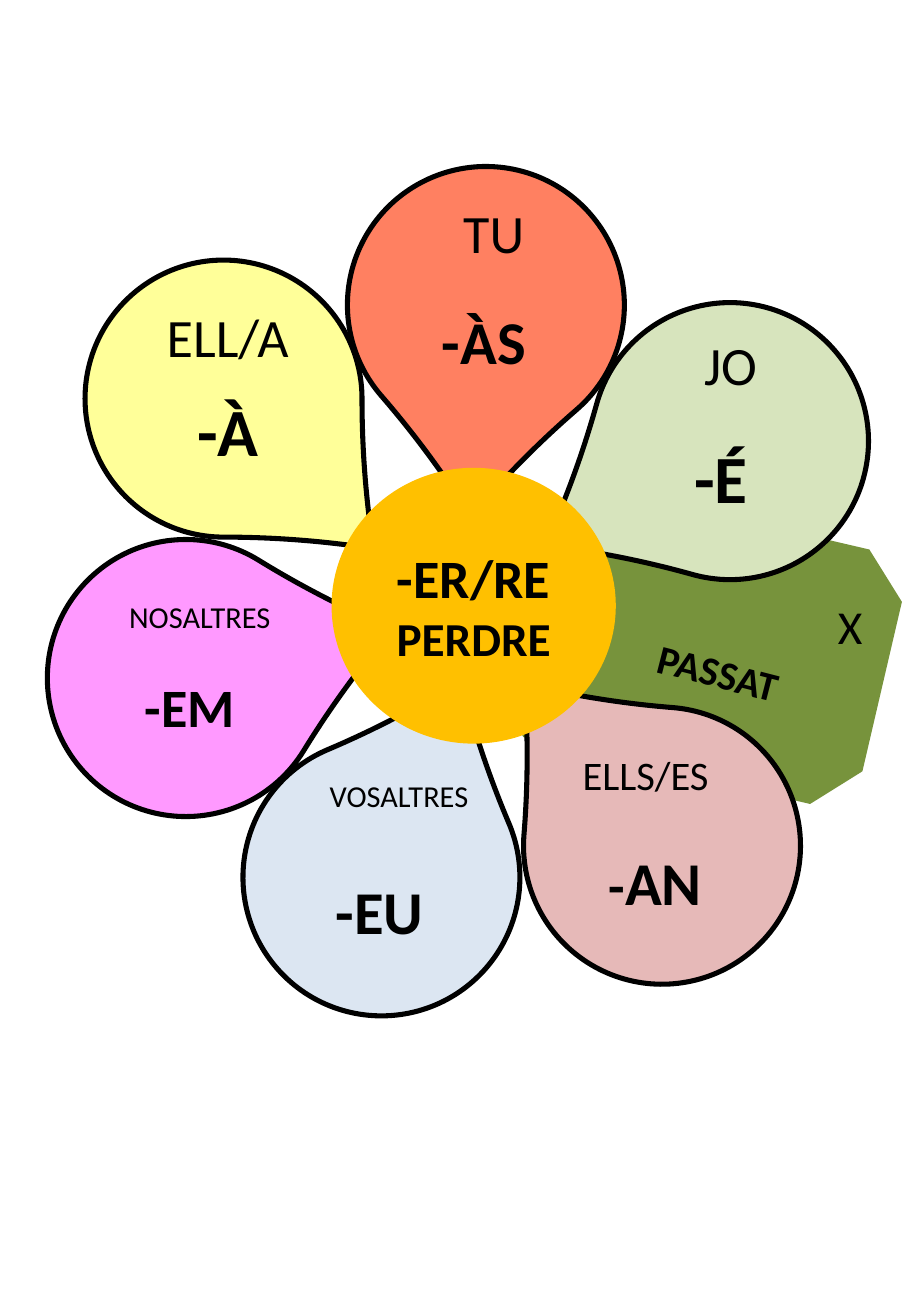
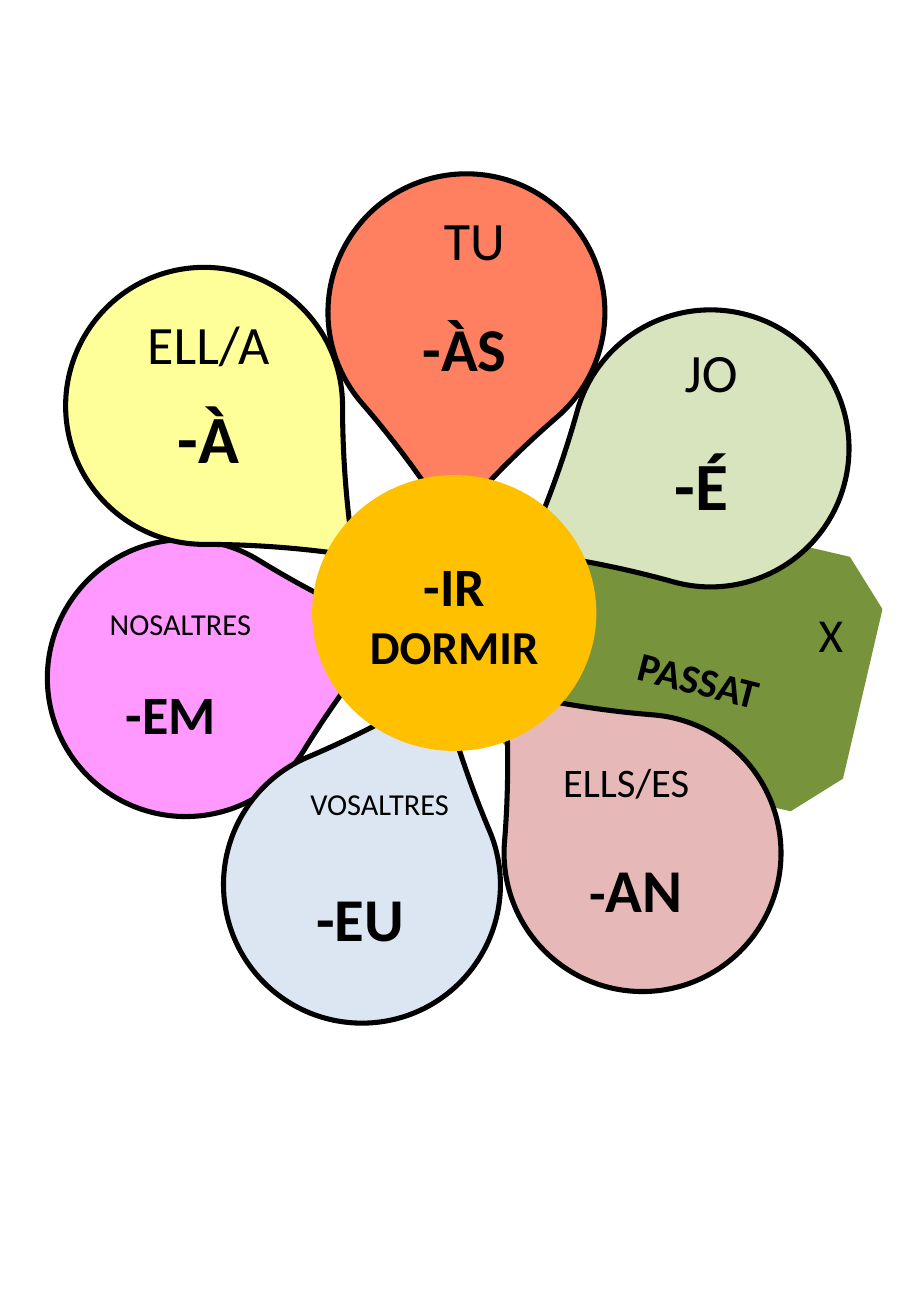
from lxml.etree import SubElement
from pptx import Presentation
from pptx.dml.color import RGBColor
from pptx.enum.shapes import MSO_SHAPE
from pptx.enum.text import MSO_ANCHOR, MSO_AUTO_SIZE, PP_ALIGN
from pptx.oxml.ns import qn
from pptx.util import Inches, Pt

FONT = "Calibri"
COLORS = {
    "black": "000000", "stem": "77933C", "heart": "FFC000",
    "tu": "FF3300", "jo": "D7E4BD", "ell": "FFFF99",
    "nos": "FF99FF", "vos": "DCE6F2", "ells": "E6B9B8",
}
PETAL = 2.28
LABEL = 1.41

# name: left, top, rotation
PETALS = {
    "tu": (2.86, 1.37, 139.1),
    "jo": (4.87, 2.49, 195.6),
    "ell": (0.7, 2.14, 90),
    "nos": (0.39, 4.44, 31.6),
    "vos": (2, 6.08, 337),
    "ells": (4.31, 5.82, 274.6),
}
# left, top, height, bold, runs of (text, size)
LABELS = [
    (3.36, 1.59, 0.64, False, [("TU", 32)]),
    (3.28, 2.45, 0.71, True, [("-ÀS", 36)]),
    (5.31, 2.68, 0.64, False, [("JO", 32)]),
    (1.17, 2.45, 0.64, False, [("ELL/A", 32)]),
    (5.23, 3.54, 0.77, True, [("-É", 40)]),
    (1.17, 3.15, 0.77, True, [("-À", 40)]),
    (0.86, 5.49, 0.64, True, [("-EM", 32)]),
    (0.94, 4.87, 0.4, False, [("NOSALTRES", 18)]),
    (2.58, 6.35, 0.4, False, [("VOSALTRES", 18)]),
    (4.61, 6.12, 0.5, False, [("ELLS/ES", 24)]),
    (2.42, 7.14, 0.71, True, [("-EU", 36)]),
    (4.69, 6.9, 0.71, True, [("-", 32), ("AN", 36)]),
]
# left, top, width, height, rotation, bold, runs
TAGS = [
    (5.31, 5.28, 1.22, 0.5, 14.4, True, [("PASSAT", 24)]),
    (6.8, 4.87, 0.41, 0.57, 0, False, [("X", 28)]),
]
# heart lines, shift of the flower, whether the pink petal stays behind
FLOWERS = [
    (["-ER/RE", "PERDRE"], (0, 0), False),
    (["-IR", "DORMIR"], (-0.16, 0.06), True),
]


def color(name):
    return RGBColor.from_string(COLORS[name])


def write(para, runs, bold, align):
    para.alignment = align
    for text, size in runs:
        run = para.add_run()
        run.text = text
        font = run.font
        font.name, font.size, font.bold = FONT, Pt(size), bold
        font.color.rgb = color("black")


def add_form(shapes, kind, box, fill, turn=0):
    form = shapes.add_shape(kind, *map(Inches, box))
    form.shadow.inherit = False
    form.rotation = turn
    form.fill.solid()
    form.fill.fore_color.rgb = color(fill)
    form.line.fill.background()
    return form


def add_petal(shapes, name, dx=0, dy=0):
    left, top, turn = PETALS[name]
    box = (left + dx, top + dy, PETAL, PETAL)
    petal = add_form(shapes, MSO_SHAPE.TEAR, box, name, turn)
    petal.adjustments[0] = 1.083
    petal.line.color.rgb = color("black")
    petal.line.width = Pt(3)
    if name == "tu":
        tint = petal.fill._xPr.find(qn("a:solidFill"))[0]
        SubElement(tint, qn("a:alpha"), val="62000")


def add_label(shapes, box, runs, bold, align, wrap, turn=0):
    label = shapes.add_textbox(*map(Inches, box))
    label.rotation = turn
    frame = label.text_frame
    frame.word_wrap = wrap
    frame.auto_size = MSO_AUTO_SIZE.SHAPE_TO_FIT_TEXT
    write(frame.paragraphs[0], runs, bold, align)


def add_heart(shapes, lines, dx, dy):
    box = (2.73 + dx, 3.85 + dy, 2.34, 2.27)
    heart = add_form(shapes, MSO_SHAPE.OVAL, box, "heart")
    frame = heart.text_frame
    frame.vertical_anchor = MSO_ANCHOR.MIDDLE
    ending, verb = lines
    write(frame.paragraphs[0], [(ending, 32)], True, PP_ALIGN.CENTER)
    write(frame.add_paragraph(), [(verb, 28)], True, PP_ALIGN.CENTER)


def add_flower(slide, lines, shift, behind):
    dx, dy = shift
    shapes = slide.shapes
    if behind:
        add_petal(shapes, "nos")
        shapes = shapes.add_group_shape().shapes
    box = (4.79 + dx, 3.89 + dy, 2.15, 2.87)
    stem = add_form(shapes, MSO_SHAPE.SNIP_2_SAME_RECTANGLE, box, "stem", 103.1)
    stem.adjustments[0], stem.adjustments[1] = 0.167, 0.041
    for name in PETALS:
        if not (behind and name == "nos"):
            add_petal(shapes, name, dx, dy)
    add_heart(shapes, lines, dx, dy)
    for left, top, high, bold, runs in LABELS:
        box = (left + dx, top + dy, LABEL, high)
        add_label(shapes, box, runs, bold, PP_ALIGN.CENTER, True)
    for left, top, wide, high, turn, bold, runs in TAGS:
        box = (left + dx, top + dy, wide, high)
        add_label(shapes, box, runs, bold, PP_ALIGN.LEFT, False, turn)


def main():
    deck = Presentation()
    deck.slide_width, deck.slide_height = Inches(7.5), Inches(10.83)
    for flower in FLOWERS:
        add_flower(deck.slides.add_slide(deck.slide_layouts[6]), *flower)
    deck.save("out.pptx")


if __name__ == "__main__":
    main()
